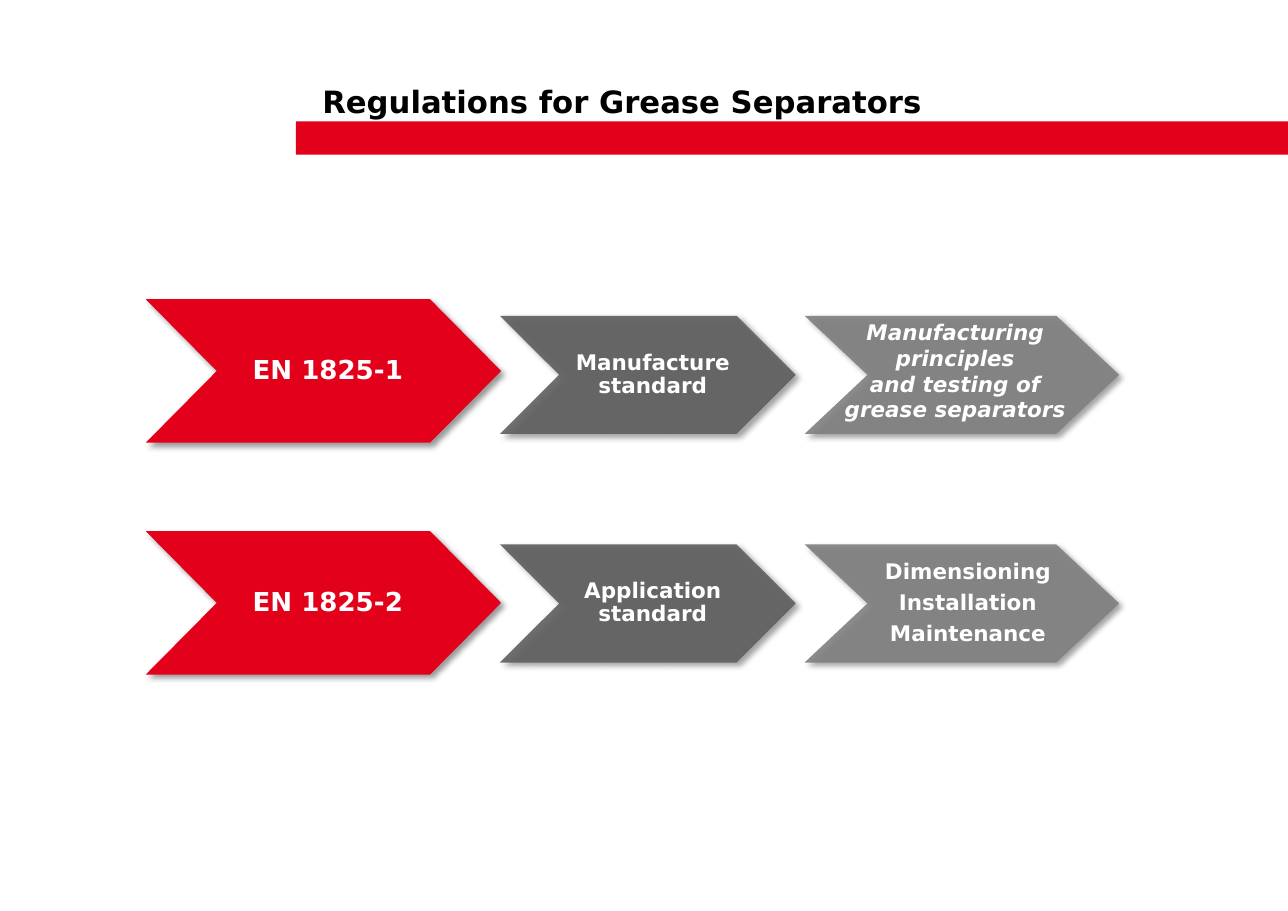
from lxml import etree
from pptx import Presentation
from pptx.dml.color import RGBColor
from pptx.enum.shapes import MSO_SHAPE
from pptx.enum.text import MSO_ANCHOR, PP_ALIGN
from pptx.oxml import parse_xml
from pptx.oxml.ns import nsdecls, qn
from pptx.util import Inches, Pt

RECT = MSO_SHAPE.RECTANGLE
TOP, MIDDLE, BOTTOM = MSO_ANCHOR.TOP, MSO_ANCHOR.MIDDLE, MSO_ANCHOR.BOTTOM
LEFT, CENTER = PP_ALIGN.LEFT, PP_ALIGN.CENTER

# Content
TITLE = "Regulations for Grease Separators"
ROWS = [
    (["EN 1825-1"], ["Manufacture standard"], []),
    (["EN 1825-2"], ["Application standard"],
     ["Dimensioning", "Installation", "Maintenance"]),
]
NOTE = ["Manufacturing principles", "and testing of", "grease separators"]

# Look
FONT = "DejaVu Sans"
COLORS = {"red": "E2001A", "dark": "5F5F5F", "mid": "808080",
          "white": "FFFFFF", "black": "000000"}
# Per column: left, width, height, fill, opacity %, text size, side insets
COLS = [
    (1.32, 3.22, 1.3, "red", 100, 17, (0.47, 0.39)),
    (4.53, 2.68, 1.07, "dark", 90, 14, (0.39, 0.3)),
    (7.29, 2.85, 1.07, "mid", 90, 14, (0.39, 0.28)),
]
# Per row: top of each column
TOPS = [(2.71, 2.86, 2.86), (4.81, 4.93, 4.93)]
NOTCH = 0.2  # share of the arrow width


def color(name):
    return RGBColor.from_string(COLORS[name])


def write(shape, lines, size=14, ink="white", italic=False, align=CENTER,
          anchor=MIDDLE, space=1.0, after=0, pad=(0.1, 0.05, 0.1, 0.05)):
    frame = shape.text_frame
    frame.word_wrap = True
    frame.vertical_anchor = anchor
    (frame.margin_left, frame.margin_top,
     frame.margin_right, frame.margin_bottom) = map(Inches, pad)
    for i, line in enumerate(lines):
        para = frame.add_paragraph() if i else frame.paragraphs[0]
        para.alignment = align
        para.line_spacing = space
        para.space_before = Pt(0)
        para.space_after = Pt(after)
        run = para.add_run()
        run.text = line
        font = run.font
        font.name, font.size = FONT, Pt(size)
        font.bold, font.italic = True, italic
        font.color.rgb = color(ink)


def paint(shape, fill, alpha=100):
    shape.shadow.inherit = False
    shape.fill.solid()
    shape.fill.fore_color.rgb = color(fill)
    shape.line.fill.background()
    if alpha < 100:
        tone = shape.fill._xPr.find(qn("a:solidFill"))[0]
        etree.SubElement(tone, qn("a:alpha")).set("val", str(alpha * 1000))


def shade(shape):
    effect = shape._element.spPr.find(qn("a:effectLst"))
    effect.append(parse_xml(
        f'<a:outerShdw {nsdecls("a")} blurRad="{Pt(4)}" dist="{Pt(3)}" '
        f'dir="{45 * 60000}" algn="tl" rotWithShape="0">'
        f'<a:srgbClr val="{COLORS["black"]}"><a:alpha val="40000"/>'
        '</a:srgbClr></a:outerShdw>'))


def arrow(shapes, x, y, w, h):
    tip, mid = x + w, y + h / 2
    dent = w * NOTCH
    points = [(tip - dent, y), (tip, mid), (tip - dent, y + h),
              (x, y + h), (x + dent, mid)]
    path = shapes.build_freeform(Inches(x), Inches(y), scale=1.0)
    path.add_line_segments([(Inches(a), Inches(b)) for a, b in points],
                           close=True)
    return path.convert_to_shape()


def main():
    deck = Presentation()
    deck.slide_width, deck.slide_height = Inches(11.67), Inches(8.25)
    slide = deck.slides.add_slide(deck.slide_layouts[5])
    shapes = slide.shapes

    # Title and red bar
    bar = shapes.add_shape(RECT, *map(Inches, (2.68, 1.1, 8.99, 0.3)))
    paint(bar, "red")
    title = shapes.title
    title.left, title.top, title.width, title.height = map(
        Inches, (2.92, 0.31, 7.49, 0.77))
    write(title, [TITLE], size=20, ink="black", align=LEFT, anchor=BOTTOM,
          space=1.1, pad=(0, 0, 0, 0))

    # Two rows of arrows
    for row, tops in zip(ROWS, TOPS):
        for lines, y, col in zip(row, tops, COLS):
            x, w, h, fill, alpha, size, (near, far) = col
            shape = arrow(shapes, x, y, w, h)
            paint(shape, fill, alpha)
            shade(shape)
            write(shape, lines, size=size, space=0.9, after=5,
                  pad=(near, 0.01, far, 0.01))

    # Text over the last arrow of the first row
    note = shapes.add_textbox(*map(Inches, (7.47, 2.84, 2.37, 1.25)))
    write(note, NOTE, italic=True, anchor=TOP)

    deck.save("out.pptx")


if __name__ == "__main__":
    main()
